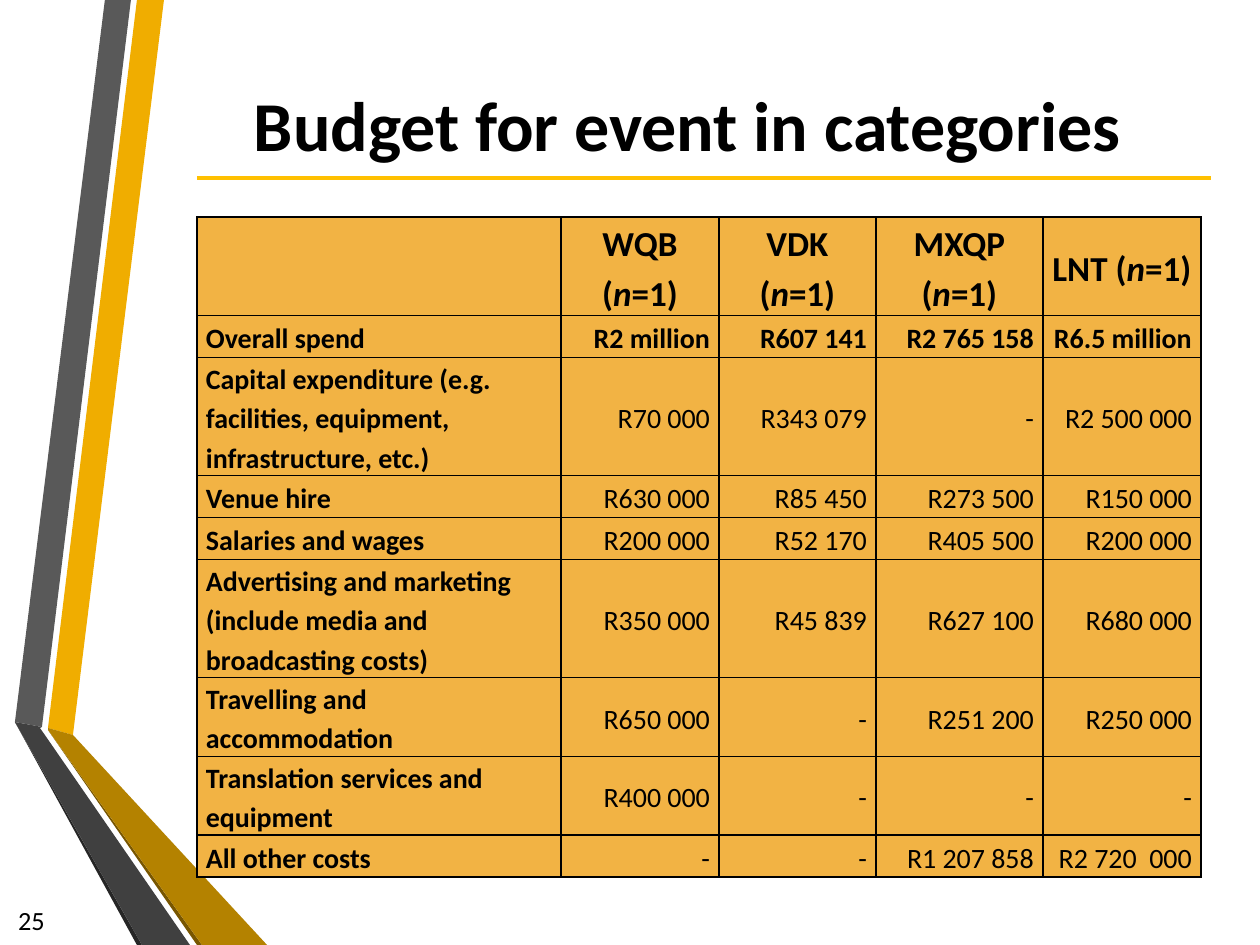
from lxml import etree
from pptx import Presentation
from pptx.dml.color import RGBColor
from pptx.enum.shapes import MSO_CONNECTOR
from pptx.enum.text import MSO_ANCHOR, MSO_AUTO_SIZE, PP_ALIGN
from pptx.oxml.ns import qn
from pptx.util import Pt

LEFT, CENTER, RIGHT = PP_ALIGN.LEFT, PP_ALIGN.CENTER, PP_ALIGN.RIGHT
MIDDLE = MSO_ANCHOR.MIDDLE
NO_AUTOFIT = MSO_AUTO_SIZE.NONE
STRAIGHT = MSO_CONNECTOR.STRAIGHT
PX = 914400 / 126
TITLE_ONLY = 5

COLORS = {
    "text": "000000",
    "cell": "F2B344",
    "rule": "FFC000",
    "yellow": "F0AD00",
    "dark yellow": "B48200",
    "brown": "785600",
    "gray": "595959",
    "dark gray": "404040",
    "charcoal": "262626",
}


def emu(px):
    return round(px * PX)


def add_text(paragraph, text, size=16, bold=False, italic=False, align=LEFT):
    paragraph.alignment = align
    run = paragraph.add_run()
    run.text = text
    run.font.name = "Calibri"
    run.font.size = Pt(size)
    run.font.bold = bold
    run.font.italic = italic
    run.font.color.rgb = RGBColor.from_string(COLORS["text"])


presentation = Presentation()
presentation.slide_width = emu(1260)
presentation.slide_height = emu(945)
slide = presentation.slides.add_slide(presentation.slide_layouts[TITLE_ONLY])

# Folded ribbons on the left
ribbons = [
    ("yellow", [(48, 728), (73, 735), (164, 0), (137, 0)]),
    ("gray", [(131, 0), (105, 0), (15, 722), (42, 727)]),
    ("charcoal", [(15, 722), (137, 945), (142, 945)]),
    ("brown", [(48, 730), (197, 945), (202, 945)]),
    ("dark yellow", [(48, 730), (202, 945), (267, 945), (73, 735), (48, 728)]),
    ("dark gray", [(190, 945), (45, 735), (40, 728), (42, 727), (15, 722), (142, 945)]),
]
for color, points in ribbons:
    builder = slide.shapes.build_freeform(*points[0], scale=PX)
    builder.add_line_segments(points[1:], close=True)
    ribbon = builder.convert_to_shape()
    ribbon.shadow.inherit = False
    ribbon.fill.solid()
    ribbon.fill.fore_color.rgb = RGBColor.from_string(COLORS[color])
    ribbon.line.fill.background()

# Title, in front of the ribbons
title = slide.shapes.title
title.element.getparent().append(title.element)
title.left, title.top, title.width, title.height = map(emu, (154, 59, 1067, 129))
title.text_frame.auto_size = NO_AUTOFIT
title.text_frame.vertical_anchor = MIDDLE
add_text(title.text_frame.paragraphs[0], "Budget for event in categories",
         size=40, bold=True, align=CENTER)

# Budget table
events = ["WQB", "VDK", "MXQP", "LNT"]
budget = [
    ("Overall spend", "R2 million", "R607 141", "R2 765 158", "R6.5 million"),
    ("Capital expenditure (e.g. facilities, equipment, infrastructure, etc.)",
     "R70 000", "R343 079", "-", "R2 500 000"),
    ("Venue hire", "R630 000", "R85 450", "R273 500", "R150 000"),
    ("Salaries and wages", "R200 000", "R52 170", "R405 500", "R200 000"),
    ("Advertising and marketing (include media and broadcasting costs)",
     "R350 000", "R45 839", "R627 100", "R680 000"),
    ("Travelling and accommodation", "R650 000", "-", "R251 200", "R250 000"),
    ("Translation services and equipment", "R400 000", "-", "-", "-"),
    ("All other costs", "-", "-", "R1 207 858", "R2 720  000"),
]
column_widths = [364, 158, 157, 167, 158]
row_heights = [92, 42, 111, 42, 42, 111, 73, 73, 42]
table = slide.shapes.add_table(
    len(row_heights), len(column_widths), emu(197), emu(217),
    emu(sum(column_widths)), emu(sum(row_heights))).table
for column, width in zip(table.columns, column_widths):
    column.width = emu(width)
for row, height in zip(table.rows, row_heights):
    row.height = emu(height)

for cell in table.iter_cells():
    cell.vertical_anchor = MIDDLE
    cell.margin_left = cell.margin_right = emu(9)
    cell.margin_top = cell.margin_bottom = 0
    cell_properties = cell._tc.get_or_add_tcPr()
    for side in ("a:lnL", "a:lnR", "a:lnT", "a:lnB"):
        border = etree.SubElement(cell_properties, qn(side), w=str(Pt(1)))
        border_fill = etree.SubElement(border, qn("a:solidFill"))
        etree.SubElement(border_fill, qn("a:srgbClr"), val=COLORS["text"])
    cell.fill.solid()
    cell.fill.fore_color.rgb = RGBColor.from_string(COLORS["cell"])
    paragraph = cell.text_frame.paragraphs[0]
    paragraph.line_spacing = 1.15
    paragraph.space_before = Pt(6)

for column_index, event in enumerate(events, start=1):
    paragraph = table.cell(0, column_index).text_frame.paragraphs[0]
    for text, italic in ((f"{event} (", False), ("n", True), ("=1)", False)):
        add_text(paragraph, text, size=20, bold=True, italic=italic, align=CENTER)

for row_index, values in enumerate(budget, start=1):
    for column_index, value in enumerate(values):
        paragraph = table.cell(row_index, column_index).text_frame.paragraphs[0]
        add_text(paragraph, value, bold=row_index == 1 or column_index == 0,
                 align=RIGHT if column_index else LEFT)

# Rule under the title
rule = slide.shapes.add_connector(STRAIGHT, emu(197), emu(178), emu(1211), emu(178))
rule.line.color.rgb = RGBColor.from_string(COLORS["rule"])
rule.line.width = Pt(2.25)
etree.SubElement(rule.element.spPr, qn("a:effectLst"))

# Slide number
number = slide.shapes.add_textbox(emu(0), emu(895), emu(57), emu(50))
number.text_frame.word_wrap = True
number.text_frame.vertical_anchor = MIDDLE
add_text(number.text_frame.paragraphs[0], "25", size=15, align=RIGHT)

presentation.save("out.pptx")
